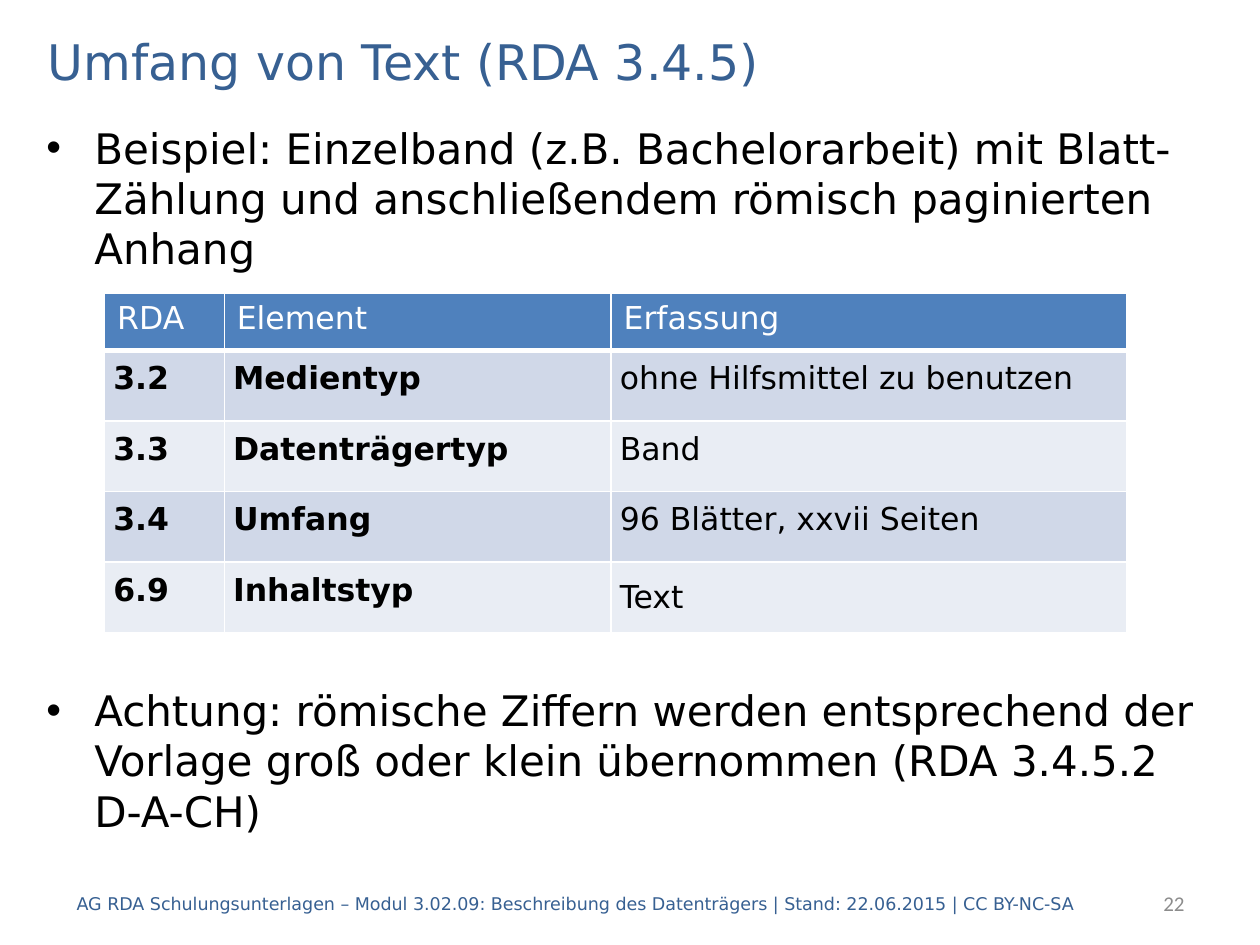
from lxml import etree
from pptx import Presentation, util as u
from pptx.dml.color import RGBColor
from pptx.enum import text
from pptx.oxml.ns import qn

FONT = "DejaVu Sans"
BLUE, BLACK, WHITE, GREY = "376092", "000000", "FFFFFF", "8C8C8C"
HEADER_FILL, BAND_FILLS = "4F81BD", ("D0D8E8", "E9EDF4")

TITLE = "Umfang von Text (RDA 3.4.5)"
BULLETS = [
    ("Beispiel: Einzelband (z.B. Bachelorarbeit) mit Blatt-Zählung und "
     "anschließendem römisch paginierten Anhang", 24),
    ("Achtung: römische Ziffern werden entsprechend der Vorlage groß oder klein "
     "übernommen (RDA 3.4.5.2 D-A-CH)", 235),
]
ROWS = [
    ("RDA", "Element", "Erfassung"),
    ("3.2", "Medientyp", "ohne Hilfsmittel zu benutzen"),
    ("3.3", "Datenträgertyp", "Band"),
    ("3.4", "Umfang", "96 Blätter, xxvii Seiten"),
    ("6.9", "Inhaltstyp", "Text"),
]
COLUMN_WIDTHS = (0.95, 3.07, 4.09)
ROW_HEIGHTS = (0.45,) + (0.56,) * 4
FOOTER = ("AG RDA Schulungsunterlagen – Modul 3.02.09: Beschreibung des Datenträgers"
          " | Stand: 22.06.2015 | CC BY-NC-SA")
PAGE_NUMBER = "22"


def color(value):
    """Return the colour for a hex string."""
    return RGBColor.from_string(value)


def style(para, size, tint, font=FONT, bold=False):
    """Format every run of a paragraph."""
    for span in para.runs:
        span.font.name, span.font.size, span.font.bold = font, u.Pt(size), bold
        span.font.color.rgb = color(tint)


def place(box, left, top, width, height):
    """Put a shape at a position given in inches."""
    box.left, box.top, box.width, box.height = map(u.Inches, (left, top, width, height))


def add_text(page, area, words, size, tint, font=FONT, align=text.PP_ALIGN.LEFT):
    """Add a one-paragraph text box centred vertically."""
    frame = page.shapes.add_textbox(*map(u.Inches, area)).text_frame
    frame.word_wrap = True
    frame.vertical_anchor = text.MSO_ANCHOR.MIDDLE
    frame.text = words
    frame.paragraphs[0].alignment = align
    style(frame.paragraphs[0], size, tint, font)


def add_bullets(page, area):
    """Add the bulleted paragraphs, spaced to leave room for the table."""
    frame = page.shapes.add_textbox(*map(u.Inches, area)).text_frame
    frame.word_wrap = True
    frame.text = "\n".join(words for words, _ in BULLETS)
    for para, (_, gap) in zip(frame.paragraphs, BULLETS):
        para.space_before = u.Pt(gap)
        style(para, 24, BLACK)
        props = para._p.get_or_add_pPr()
        props.set("marL", str(u.Inches(0.38)))
        props.set("indent", str(u.Inches(-0.38)))
        etree.SubElement(props, qn("a:buFont"), typeface="Arial")
        etree.SubElement(props, qn("a:buChar"), char="•")


def add_borders(cell, bottom):
    """Draw white lines on all four sides of a cell."""
    props = cell._tc.get_or_add_tcPr()
    sides = (("lnL", 1), ("lnR", 1), ("lnT", 1), ("lnB", bottom))
    for index, (side, width) in enumerate(sides):
        line = etree.Element(qn(f"a:{side}"), w=str(u.Pt(width)))
        fill = etree.SubElement(line, qn("a:solidFill"))
        etree.SubElement(fill, qn("a:srgbClr"), val=WHITE)
        props.insert(index, line)


def fill_cell(cell, words, row, column):
    """Write and format one table cell."""
    header = row == 0
    cell.text = words
    para = cell.text_frame.paragraphs[0]
    cell.fill.solid()
    cell.fill.fore_color.rgb = color(HEADER_FILL if header else BAND_FILLS[(row - 1) % 2])
    style(para, 18, WHITE if header else BLACK, bold=not header and column < 2)
    if not header:
        cell.vertical_anchor = text.MSO_ANCHOR.MIDDLE
        cell.margin_left = cell.margin_right = u.Inches(0.07)
        cell.margin_top = cell.margin_bottom = 0
        para.space_after = u.Pt(6)
        if words != "Text":
            para.line_spacing = u.Pt(13)
    add_borders(cell, 3 if header else 1)


def add_elements_table(page, left, top):
    """Add the table of RDA elements."""
    size = map(u.Inches, (left, top, sum(COLUMN_WIDTHS), sum(ROW_HEIGHTS)))
    table = page.shapes.add_table(len(ROWS), len(COLUMN_WIDTHS), *size).table
    for column, width in zip(table.columns, COLUMN_WIDTHS):
        column.width = u.Inches(width)
    for row, height in zip(table.rows, ROW_HEIGHTS):
        row.height = u.Inches(height)
    for r, entries in enumerate(ROWS):
        for c, words in enumerate(entries):
            fill_cell(table.cell(r, c), words, r, c)


def main():
    """Build and save the slide."""
    deck = Presentation()
    deck.slide_width, deck.slide_height = u.Inches(10), u.Inches(7.5)
    page = deck.slides.add_slide(deck.slide_layouts[5])

    title = page.shapes.title
    place(title, 0.28, 0.2, 9.45, 0.56)
    title.text_frame.text = TITLE
    title.text_frame.vertical_anchor = text.MSO_ANCHOR.MIDDLE
    title.text_frame.paragraphs[0].alignment = text.PP_ALIGN.LEFT
    style(title.text_frame.paragraphs[0], 28, BLUE)

    add_bullets(page, (0.27, 0.92, 9.45, 5.98))
    add_elements_table(page, 0.83, 2.33)
    add_text(page, (0.51, 6.97, 8.66, 0.4), FOOTER, 10, BLUE)
    add_text(page, (7.91, 6.97, 1.59, 0.4), PAGE_NUMBER, 12, GREY, "Calibri",
             text.PP_ALIGN.RIGHT)
    deck.save("out.pptx")


if __name__ == "__main__":
    main()
